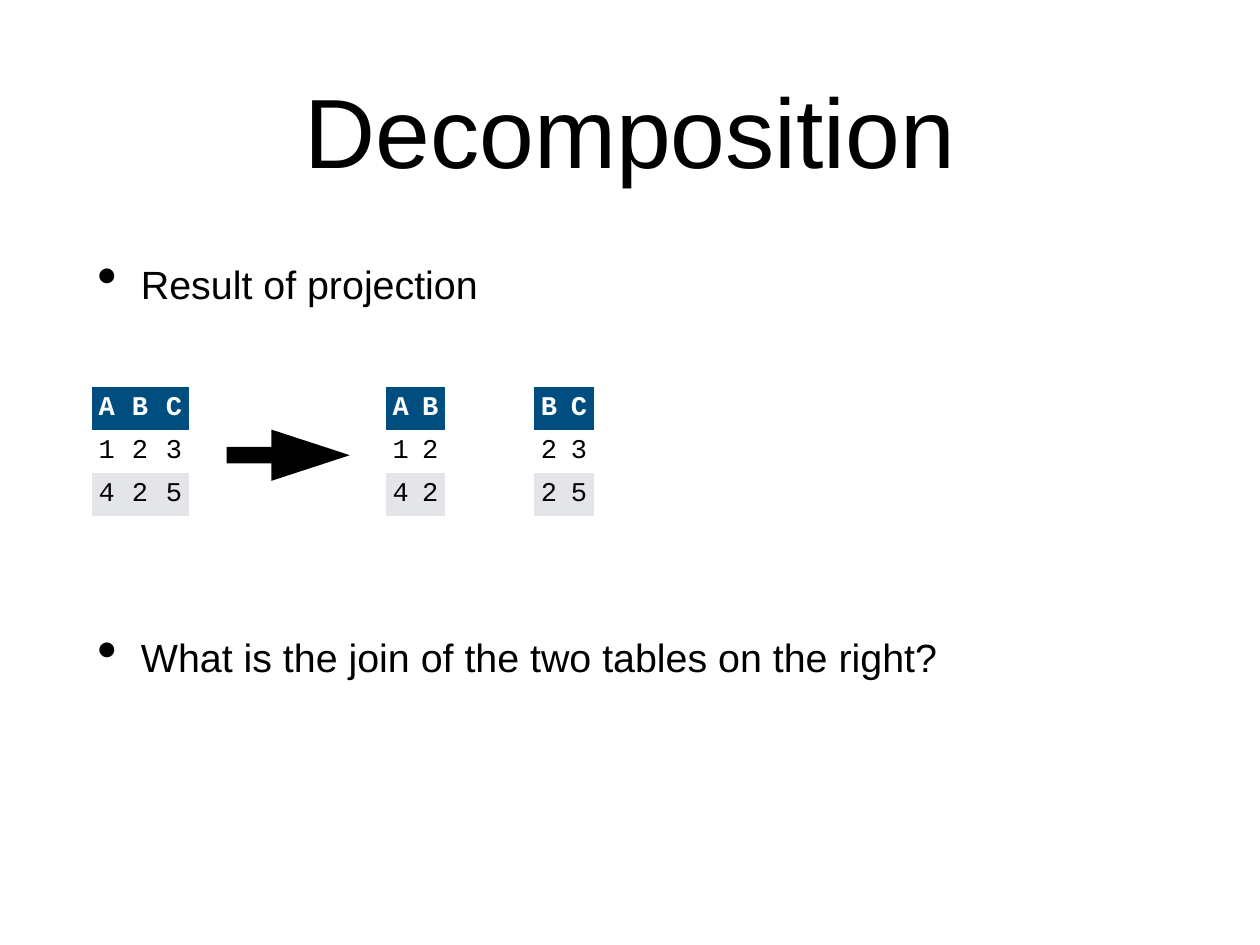
import pptx
import pptx.util
import pptx.dml.color
import pptx.enum.shapes
import pptx.enum.text
import pptx.oxml.ns
import lxml.etree

Cm = pptx.util.Cm
Pt = pptx.util.Pt
RGBColor = pptx.dml.color.RGBColor
ALIGN = pptx.enum.text.PP_ALIGN
ANCHOR = pptx.enum.text.MSO_ANCHOR

BLACK = RGBColor(0x00, 0x00, 0x00)
WHITE = RGBColor(0xFF, 0xFF, 0xFF)
NAVY = RGBColor(0x00, 0x4D, 0x80)
GREY = RGBColor(0xE3, 0xE5, 0xE8)

ROW_FILLS = (NAVY, WHITE, GREY)
PLAIN_TABLE_STYLE = "{2D5ABB26-0587-4C30-8999-92F81FD0307C}"


class Page:
    text_font = "Arial"
    table_font = "Courier New"
    inset = Cm(0.15)
    hanging = Cm(1.25)
    row_height = Cm(1.23)

    def __init__(self, deck):
        self.slide = deck.slides.add_slide(deck.slide_layouts[5])

    def set_insets(self, holder):
        holder.margin_left = holder.margin_right = self.inset
        holder.margin_top = holder.margin_bottom = self.inset

    def set_font(self, para, name, size, color, bold=False):
        para.font.name = name
        para.font.size = Pt(size)
        para.font.color.rgb = color
        para.font.bold = bold

    def title(self, text, left, top, width, height):
        box = self.slide.shapes.title
        box.left, box.top, box.width, box.height = left, top, width, height
        frame = box.text_frame
        frame.auto_size = pptx.enum.text.MSO_AUTO_SIZE.NONE
        frame.vertical_anchor = ANCHOR.MIDDLE
        self.set_insets(frame)
        frame.text = text
        para = frame.paragraphs[0]
        para.alignment = ALIGN.CENTER
        self.set_font(para, self.text_font, 80, BLACK)

    def bullets(self, texts, gap, left, top, width, height):
        frame = self.slide.shapes.add_textbox(left, top, width, height).text_frame
        frame.word_wrap = True
        self.set_insets(frame)
        frame.text = "\n".join(texts)
        for index, para in enumerate(frame.paragraphs):
            self.set_font(para, self.text_font, 32, BLACK)
            if index:
                para.space_before = gap
            self.add_bullet(para)

    def add_bullet(self, para):
        properties = para._p.get_or_add_pPr()
        properties.set("marL", str(self.hanging))
        properties.set("indent", str(-self.hanging))
        settings = (("a:buSzPct", "val", "145000"), ("a:buChar", "char", "•"))
        marks = []
        for tag, key, value in settings:
            mark = lxml.etree.Element(pptx.oxml.ns.qn(tag))
            mark.set(key, value)
            marks.append(mark)
        position = len(properties.findall(pptx.oxml.ns.qn("a:spcBef")))
        properties[position:position] = marks

    def table(self, rows, widths, left, top):
        frame = self.slide.shapes.add_table(
            len(rows), len(widths), left, top, sum(widths), self.row_height * len(rows))
        table = frame.table
        table.horz_banding = False
        table.first_row = False
        style = table._tbl.tblPr.find(pptx.oxml.ns.qn("a:tableStyleId"))
        style.text = PLAIN_TABLE_STYLE
        for column, width in zip(table.columns, widths):
            column.width = width
        for row_index, (values, fill) in enumerate(zip(rows, ROW_FILLS)):
            table.rows[row_index].height = self.row_height
            header = row_index == 0
            for column_index, value in enumerate(values):
                cell = table.cell(row_index, column_index)
                cell.fill.solid()
                cell.fill.fore_color.rgb = fill
                cell.vertical_anchor = ANCHOR.MIDDLE
                self.set_insets(cell)
                cell.text = value
                para = cell.text_frame.paragraphs[0]
                para.alignment = ALIGN.CENTER
                self.set_font(para, self.table_font, 22, WHITE if header else BLACK, header)

    def arrow(self, left, top, width, height):
        shape = self.slide.shapes.add_shape(
            pptx.enum.shapes.MSO_SHAPE.RIGHT_ARROW, left, top, width, height)
        shape.adjustments[0] = 0.32
        shape.adjustments[1] = 1.53
        shape.shadow.inherit = False
        shape.fill.solid()
        shape.fill.fore_color.rgb = BLACK
        shape.line.fill.background()


def main():
    deck = pptx.Presentation()
    deck.slide_width = Cm(36.12)
    deck.slide_height = Cm(27.1)
    page = Page(deck)

    left, width = Cm(2.64), Cm(30.84)
    page.title("Decomposition", left, Cm(0.71), width, Cm(6))
    page.bullets(
        ("Result of projection", "What is the join of the two tables on the right?"),
        Pt(265), left, Cm(7.3), width, Cm(17.4))

    table_top = Cm(11.1)
    page.table(("ABC", "123", "425"), (Cm(0.84), Cm(1.07), Cm(0.88)), left, table_top)
    page.table(("AB", "12", "42"), (Cm(0.84), Cm(0.84)), Cm(11.07), table_top)
    page.arrow(Cm(6.5), Cm(12.32), Cm(3.53), Cm(1.47))
    page.table(("BC", "23", "25"), (Cm(0.84), Cm(0.88)), Cm(15.32), table_top)

    deck.save("out.pptx")


if __name__ == "__main__":
    main()
